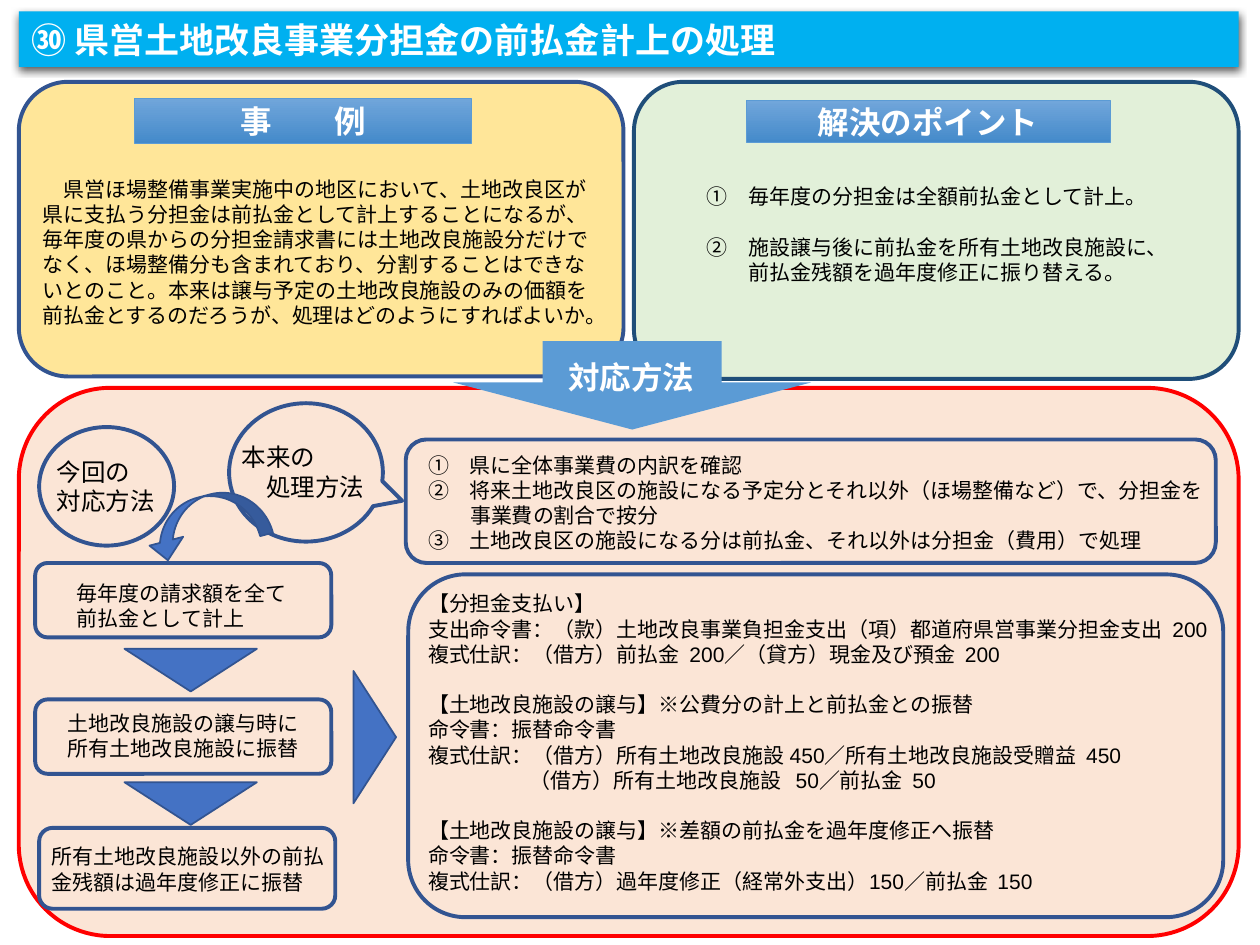
"""Build the slide on booking prepaid shares of prefectural land improvement works."""
from lxml.etree import SubElement
from pptx import Presentation
from pptx.dml.color import RGBColor as Rgb
from pptx.enum.shapes import MSO_SHAPE as Kind
from pptx.enum.text import MSO_ANCHOR as Anchor, PP_ALIGN as Align
from pptx.oxml.ns import qn
from pptx.util import Cm, Pt

WHITE = Rgb(0xFF, 0xFF, 0xFF)
BLACK = Rgb(0, 0, 0)
RED = Rgb(0xFF, 0, 0)
CYAN = Rgb(0x00, 0xB0, 0xF0)
PEACH = Rgb(0xFB, 0xE5, 0xD6)
GREEN = Rgb(0xE2, 0xF0, 0xD9)
YELLOW = Rgb(0xFF, 0xE6, 0x99)
NAVY = Rgb(0x32, 0x54, 0x91)
DEEP = Rgb(0x1F, 0x4E, 0x79)
BLUE = Rgb(0x44, 0x72, 0xC4)
SKY = Rgb(0x5B, 0x9B, 0xD5)
LIGHT = Rgb(0x71, 0xA6, 0xDB)
DARK = Rgb(0x44, 0x8A, 0xCA)
LATIN = "Arial"
CJK = "Noto Sans CJK JP"
GAP = 14.4


class Deck:
    """Hold the text style and the current slide."""

    def __init__(self, wide, high):
        self.show = Presentation()
        self.show.slide_width, self.show.slide_height = Cm(wide), Cm(high)
        self.slide = self.show.slides.add_slide(self.show.slide_layouts[6])

    def shape(self, kind, box, fill=None, line=NAVY, width=2.25, adjust=(), turn=0):
        item = self.slide.shapes.add_shape(kind, *map(Cm, box))
        item.shadow.inherit = False
        item.rotation = turn
        if fill is None:
            item.fill.background()
        else:
            item.fill.solid()
            item.fill.fore_color.rgb = fill
        if line is None:
            item.line.fill.background()
        else:
            item.line.color.rgb = line
            item.line.width = Pt(width)
        for spot, value in enumerate(adjust):
            item.adjustments[spot] = value
        return item

    def put(self, item, lines, size=12, color=BLACK, bold=False, font=LATIN, align=Align.LEFT):
        frame = item.text_frame
        frame.word_wrap = True
        for spot, line in enumerate(lines):
            text, left, first, gap = line if isinstance(line, tuple) else (line, 0, 0, 0)
            para = frame.paragraphs[0] if spot == 0 else frame.add_paragraph()
            para.text = text
            para.alignment = align
            para.space_before = Pt(gap)
            para.font.size, para.font.bold, para.font.name = Pt(size), bold, font
            para.font.color.rgb = color
            props = para._p.get_or_add_pPr()
            SubElement(props.find(qn("a:defRPr")), qn("a:ea"), typeface=CJK)
            props.set("marL", str(Pt(left)))
            props.set("indent", str(Pt(first)))

    def text(self, box, lines, **style):
        item = self.slide.shapes.add_textbox(*map(Cm, box))
        self.put(item, lines, **style)

    def label(self, item, text, size=18, align=Align.CENTER, anchor=Anchor.MIDDLE):
        item.text_frame.vertical_anchor = anchor
        self.put(item, [text], size=size, color=WHITE, bold=True, align=align)

    def title(self, box, text):
        item = self.shape(Kind.RECTANGLE, box, CYAN, None)
        self.label(item, text, 20, Align.LEFT)
        effect = item._element.spPr.find(qn("a:effectLst"))
        shade = SubElement(effect, qn("a:outerShdw"), blurRad=str(Pt(4.5)), dist=str(Pt(1.5)),
                           dir="5400000", rotWithShape="0")
        tint = SubElement(shade, qn("a:srgbClr"), val="000000")
        SubElement(tint, qn("a:alpha"), val="63000")

    def head(self, box, text):
        item = self.shape(Kind.RECTANGLE, box, SKY, SKY, 0.5)
        item.fill.gradient()
        item.fill.gradient_angle = 270
        for stop, color, place in zip(item.fill.gradient_stops, (LIGHT, DARK), (0, 1)):
            stop.color.rgb = color
            stop.position = place
        self.label(item, text)

    def panel(self, box, fill=None, line=NAVY):
        self.shape(Kind.ROUNDED_RECTANGLE, box, fill, line)

    def wedge(self, left, top, turn=0):
        self.shape(Kind.FLOWCHART_MERGE, (left, top, 2.67, 0.86), BLUE, NAVY, 1, turn=turn)

    def curve(self, box):
        item = self.shape(Kind.CURVED_DOWN_ARROW, box, BLUE, NAVY, 1, (0.25, 0.655, 0.355), 345.3)
        item._element.spPr.find(qn("a:xfrm")).set("flipH", "1")


def main():
    deck = Deck(25.4, 19.05)
    deck.panel((0.38, 7.82, 24.59, 11.05), PEACH, RED)
    deck.title((0.38, 0.23, 24.59, 1.12), "㉚ 県営土地改良事業分担金の前払金計上の処理")

    deck.panel((12.78, 1.65, 12.19, 5.99), GREEN, DEEP)
    deck.text((14, 3.58, 9.98, 2.31), [
        ("①　毎年度の分担金は全額前払金として計上。", 24, -24, 0),
        ("②　施設譲与後に前払金を所有土地改良施設に、\v前払金残額を過年度修正に振り替える。", 24, -24, GAP),
    ])
    deck.head((15.04, 2.03, 7.34, 0.84), "解決のポイント")

    deck.panel((0.38, 1.65, 12.19, 5.94), YELLOW)
    deck.text((0.61, 3.43, 11.73, 3.33), [
        ("県営ほ場整備事業実施中の地区において、土地改良区が県に支払う分担金は前払金として"
         "計上することになるが、毎年度の県からの分担金請求書には土地改良施設分だけでなく、"
         "ほ場整備分も含まれており、分割することはできないとのこと。本来は譲与予定の"
         "土地改良施設のみの価額を前払金とするのだろうが、処理はどのようにすればよいか。", 0, 12, 0),
    ])
    deck.head((2.72, 1.98, 6.78, 0.91), "事　　例")

    deck.shape(Kind.DOWN_ARROW, (9.14, 6.88, 7.21, 1.78), SKY, None, adjust=(0.5, 0.533))
    plate = deck.shape(Kind.RECTANGLE, (11.15, 7.09, 3.15, 1.02), SKY, None)
    deck.label(plate, "対応方法", anchor=Anchor.TOP)

    steps = [
        ((0.71, 11.35, 5.97, 1.5), (1.3, 11.58, 4.8, 1.27), ["毎年度の請求額を全て前払金として計上"]),
        ((0.71, 14.1, 5.97, 1.5), (1.12, 14.2, 5.36, 1.27), ["土地改良施設の譲与時に所有土地改良施設に振替"]),
        ((0.79, 16.69, 5.97, 1.63), (0.79, 16.89, 6.3, 1.27),
         ["所有土地改良施設以外の前払", "金残額は過年度修正に振替"]),
    ]
    for frame, area, lines in steps:
        deck.text(area, lines)
        deck.panel(frame)
    for left, top, turn in ((2.51, 13.08, 0), (2.51, 15.77, 0), (6.22, 14.43, 270)):
        deck.wedge(left, top, turn)

    deck.text((8.38, 11.79, 16.38, 6.93), [
        "【分担金支払い】",
        "支出命令書：（款）土地改良事業負担金支出（項）都道府県営事業分担金支出  200",
        "複式仕訳：（借方）前払金  200／（貸方）現金及び預金  200",
        ("【土地改良施設の譲与】※公費分の計上と前払金との振替", 0, 0, GAP),
        "命令書：振替命令書",
        "複式仕訳：（借方）所有土地改良施設 450／所有土地改良施設受贈益  450",
        ("（借方）所有土地改良施設   50／前払金  50", 58, 0, 0),
        ("【土地改良施設の譲与】※差額の前払金を過年度修正へ振替", 0, 0, GAP),
        "命令書：振替命令書",
        "複式仕訳：（借方）過年度修正（経常外支出）150／前払金  150",
    ])
    deck.panel((8.23, 11.58, 16.43, 6.91))

    deck.text((8.38, 8.99, 16.28, 2.31), [(text, 24, -24, 0) for text in (
        "①　県に全体事業費の内訳を確認",
        "②　将来土地改良区の施設になる予定分とそれ以外（ほ場整備など）で、分担金を\v事業費の割合で按分",
        "③　土地改良区の施設になる分は前払金、それ以外は分担金（費用）で処理",
    )])
    deck.panel((8.18, 8.86, 16.33, 2.49))

    deck.shape(Kind.OVAL_CALLOUT, (4.62, 8.13, 3.1, 2.79), adjust=(0.625, 0.205))
    deck.text((4.62, 8.79, 3.07, 1.45), ["本来の", ("処理方法", 14, 0, 0)], size=14, font=CJK)
    deck.curve((2.87, 10.01, 2.54, 1.07))
    deck.text((0.89, 9.09, 2.72, 1.45), ["今回の", "対応方法"], size=14, font=CJK)
    deck.shape(Kind.OVAL, (0.79, 8.61, 2.72, 2.39))
    deck.show.save("out.pptx")


if __name__ == "__main__":
    main()
